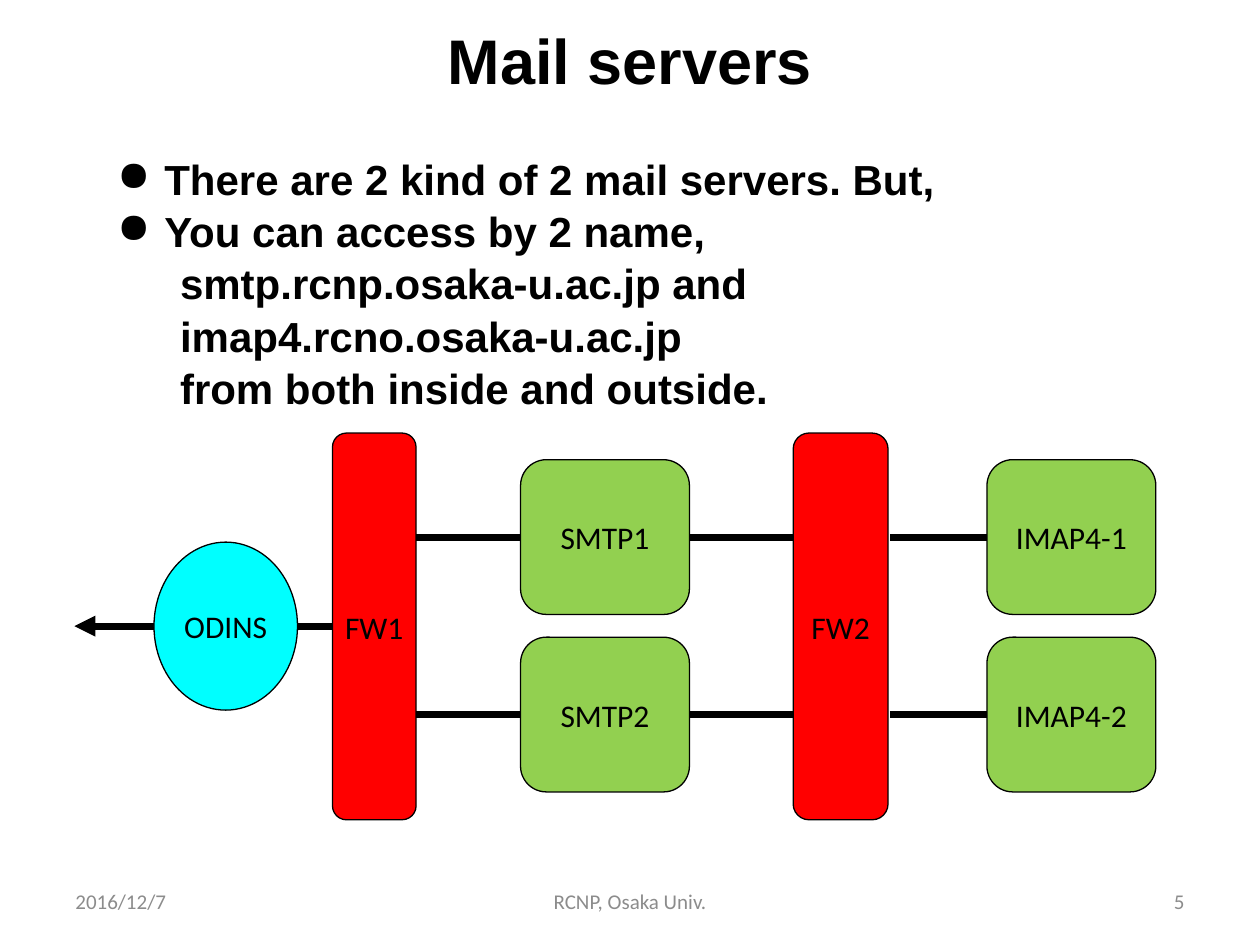
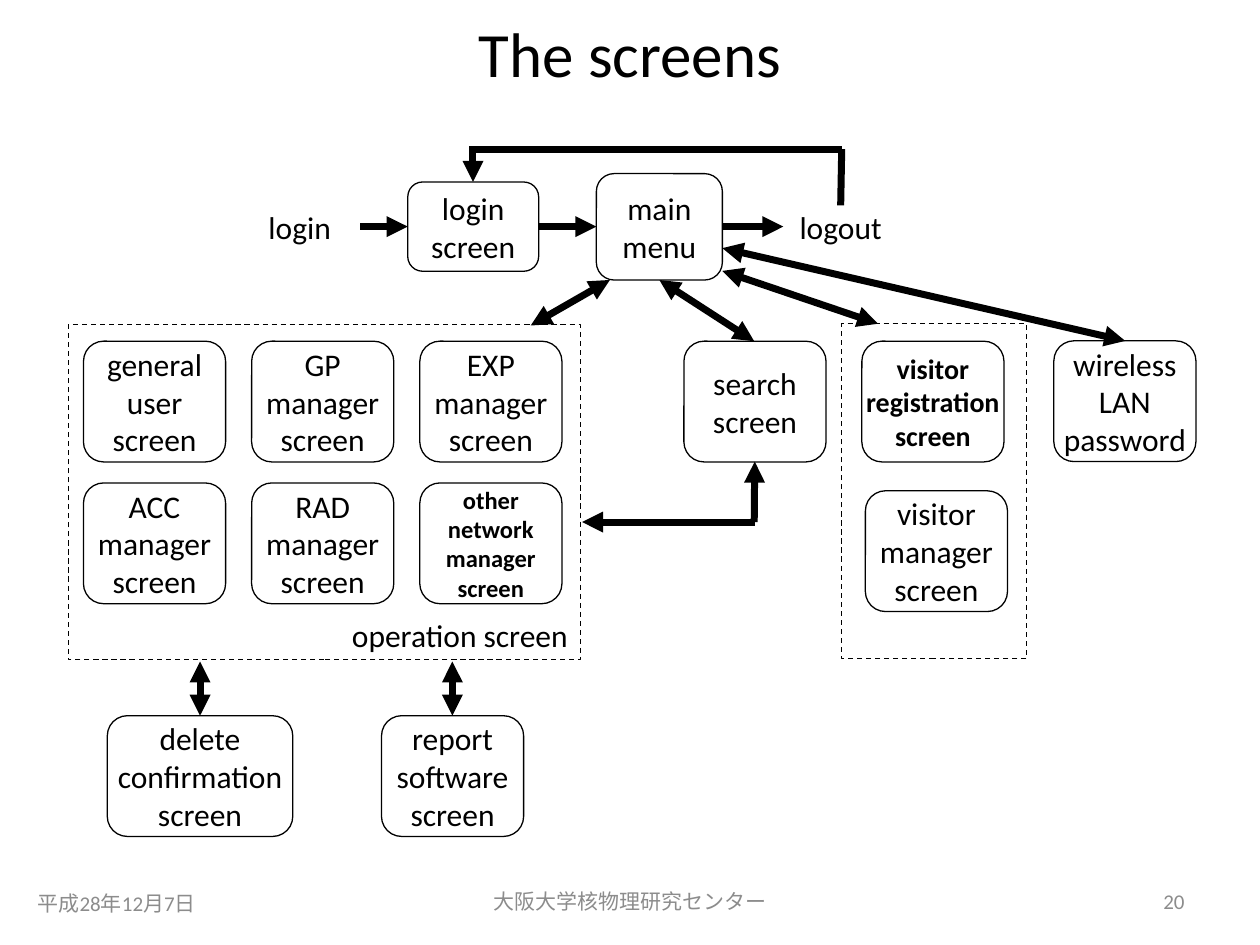
from lxml import etree
from pptx import Presentation
from pptx.dml.color import RGBColor
from pptx.enum.dml import MSO_LINE
from pptx.enum.shapes import MSO_CONNECTOR, MSO_SHAPE
from pptx.enum.text import MSO_ANCHOR, MSO_AUTO_SIZE, PP_ALIGN
from pptx.oxml.ns import qn
from pptx.util import Pt

ROUNDED = MSO_SHAPE.ROUNDED_RECTANGLE
RECTANGLE = MSO_SHAPE.RECTANGLE
OVAL = MSO_SHAPE.OVAL
STRAIGHT = MSO_CONNECTOR.STRAIGHT
DASH = MSO_LINE.DASH
MIDDLE = MSO_ANCHOR.MIDDLE
BOTTOM = MSO_ANCHOR.BOTTOM
LEFT, CENTER, RIGHT = PP_ALIGN.LEFT, PP_ALIGN.CENTER, PP_ALIGN.RIGHT

BLACK = RGBColor(0x00, 0x00, 0x00)
WHITE = RGBColor(0xFF, 0xFF, 0xFF)
GRAY = RGBColor(0x8C, 0x8C, 0x8C)
RED = RGBColor(0xFF, 0x00, 0x00)
GREEN = RGBColor(0x92, 0xD0, 0x50)
CYAN = RGBColor(0x00, 0xFF, 0xFF)


def add_box(slide, kind, left, top, width, height, text="", fill=None, size=18, bold=False):
    shape = slide.shapes.add_shape(kind, Pt(left), Pt(top), Pt(width), Pt(height))
    shape.shadow.inherit = False
    if fill is None:
        shape.fill.background()
    else:
        shape.fill.solid()
        shape.fill.fore_color.rgb = fill
    shape.line.color.rgb = BLACK
    shape.line.width = Pt(0.75)
    frame = shape.text_frame
    frame.word_wrap = False
    frame.vertical_anchor = MIDDLE
    frame.text = text
    for paragraph in frame.paragraphs:
        paragraph.alignment = CENTER
        paragraph.font.name = "Calibri"
        paragraph.font.size = Pt(size)
        paragraph.font.bold = bold
        paragraph.font.color.rgb = BLACK
    return shape


def add_line(slide, x1, y1, x2, y2, *arrow_ends):
    connector = slide.shapes.add_connector(STRAIGHT, Pt(x1), Pt(y1), Pt(x2), Pt(y2))
    connector.line.color.rgb = BLACK
    connector.line.width = Pt(4)
    line = connector.line._get_or_add_ln()
    for end in arrow_ends:
        etree.SubElement(line, qn("a:" + end), type="triangle")
    etree.SubElement(connector._element.spPr, qn("a:effectLst"))


presentation = Presentation()
presentation.slide_width = Pt(720)
presentation.slide_height = Pt(540)

slides = []
for title, title_font, title_bold, title_top, date, date_left, date_top, footer, number in [
    ("Mail servers", "Arial", True, 8.6, "2016/12/7", 36, 500.4, "RCNP, Osaka Univ.", "5"),
    ("The screens", "Calibri", False, 4.3, "平成28年12月7日", 14.4, 501.8, "大阪大学核物理研究センター", "20"),
]:
    slide = presentation.slides.add_slide(presentation.slide_layouts[5])
    slides.append(slide)
    heading = slide.shapes.title
    heading.left, heading.top, heading.width, heading.height = Pt(54), Pt(title_top), Pt(612), Pt(51)
    heading.text_frame.text = title
    heading.text_frame.auto_size = MSO_AUTO_SIZE.NONE
    heading.text_frame.vertical_anchor = MIDDLE
    paragraph = heading.text_frame.paragraphs[0]
    paragraph.alignment = CENTER
    paragraph.font.name = title_font
    paragraph.font.size = Pt(36)
    paragraph.font.bold = title_bold
    paragraph.font.color.rgb = BLACK
    for text, left, top, width, alignment in [
        (date, date_left, date_top, 168, LEFT),
        (footer, 246, 500.4, 228, CENTER),
        (number, 516, 500.4, 168, RIGHT),
    ]:
        text_box = slide.shapes.add_textbox(Pt(left), Pt(top), Pt(width), Pt(28.8))
        text_box.text_frame.word_wrap = True
        text_box.text_frame.vertical_anchor = MIDDLE
        text_box.text_frame.text = text
        paragraph = text_box.text_frame.paragraphs[0]
        paragraph.alignment = alignment
        paragraph.font.name = "Calibri"
        paragraph.font.size = Pt(12)
        paragraph.font.color.rgb = GRAY

mail_slide, screens_slide = slides

body = mail_slide.shapes.add_textbox(Pt(59.8), Pt(82.8), Pt(586.8), Pt(145.4))
body.text_frame.word_wrap = True
body.text_frame.text = "\n".join([
    "There are 2 kind of 2 mail servers. But,",
    "You can access by 2 name,",
    "smtp.rcnp.osaka-u.ac.jp and imap4.rcno.osaka-u.ac.jp",
    "from both inside and outside.",
])
for index, paragraph in enumerate(body.text_frame.paragraphs):
    paragraph.line_spacing = 1.04
    paragraph.font.name = "Arial"
    paragraph.font.size = Pt(24)
    paragraph.font.bold = True
    paragraph.font.color.rgb = BLACK
    properties = paragraph._p.get_or_add_pPr()
    if index < 2:
        properties.set("marL", str(Pt(27)))
        properties.set("indent", str(Pt(-27)))
        bullet = etree.Element(qn("a:buChar"), char="●")
        properties.find(qn("a:lnSpc")).addnext(bullet)
    else:
        paragraph.level = 1
        properties.set("marL", str(Pt(36)))
        properties.set("indent", "0")

add_line(mail_slide, 88, 357.8, 42.5, 357.8, "tailEnd")
add_line(mail_slide, 170, 357.8, 190, 357.8)
add_box(mail_slide, OVAL, 88, 309.8, 82, 96, "ODINS", CYAN)
add_box(mail_slide, ROUNDED, 190, 247.5, 47.8, 221, "FW1", RED)
add_box(mail_slide, ROUNDED, 453.3, 247.5, 54.2, 221, "FW2", RED)
for row in range(2):
    server_top = 262.7 + 101.4 * row
    wire_y = server_top + 44.2
    for name, left in [("SMTP", 297.5), ("IMAP4-", 564)]:
        add_box(mail_slide, ROUNDED, left, server_top, 96.5, 88.4, f"{name}{row + 1}", GREEN)
    for start, end in [(237.8, 297.5), (394, 453.3), (508.5, 564)]:
        add_line(mail_slide, start, wire_y, end, wire_y)

for x1, y1, x2, y2 in [
    (206, 129.5, 233, 129.5),
    (307.7, 129.5, 340.8, 129.5),
    (412.8, 129.5, 447.6, 129.5),
    (270.3, 83.5, 270.3, 104),
    (431.3, 298.3, 332.6, 298.3),
    (431, 298.3, 431.3, 263.8),
]:
    add_line(screens_slide, x1, y1, x2, y2, "tailEnd")
for x1, y1, x2, y2 in [
    (348.5, 160, 303.3, 186),
    (376.8, 160, 431, 195),
    (412.8, 154.8, 501.8, 185),
    (412.8, 141.8, 643, 194.8),
    (114.3, 378, 114.3, 409),
    (258.5, 378, 258.5, 409),
]:
    add_line(screens_slide, x1, y1, x2, y2, "headEnd", "tailEnd")
add_line(screens_slide, 481, 85.2, 480.4, 117.4)
add_line(screens_slide, 481, 85.2, 269.3, 85.2)

for text, left, width in [("login", 136.8, 69), ("logout", 447.6, 65.5)]:
    label = add_box(screens_slide, ROUNDED, left, 117.4, width, 24.5, text)
    label.line.fill.background()
add_box(screens_slide, ROUNDED, 233, 104, 74.8, 51, "login\nscreen", WHITE)
add_box(screens_slide, ROUNDED, 340.8, 99.2, 72, 60.8, "main\nmenu", WHITE)

operation_frame = add_box(screens_slide, RECTANGLE, 39, 185.5, 292.6, 191.5, "operation screen")
operation_frame.text_frame.word_wrap = True
operation_frame.text_frame.vertical_anchor = BOTTOM
operation_frame.text_frame.paragraphs[0].alignment = RIGHT
visitor_frame = add_box(screens_slide, RECTANGLE, 481, 185, 105.7, 191.5)
for frame in (operation_frame, visitor_frame):
    frame.line.dash_style = DASH

operation_screens = [
    ("general\nuser\nscreen", "GP\nmanager\nscreen", "EXP\nmanager\nscreen"),
    ("ACC\nmanager\nscreen", "RAD\nmanager\nscreen", "other\nnetwork\nmanager\nscreen"),
]
for row, names in enumerate(operation_screens):
    for column, name in enumerate(names):
        small = name.startswith("other")
        add_box(screens_slide, ROUNDED, 47.7 + 96.1 * column, 195 + 81 * row, 81.2, 69, name,
                size=14 if small else 18, bold=small)

for name, left, top, width in [
    ("search\nscreen", 390.8, 195, 81.2),
    ("visitor\nmanager\nscreen", 494.5, 280.5, 81.2),
    ("wireless\nLAN\npassword", 602.2, 194.8, 81.2),
    ("delete\nconfirmation\nscreen", 61.3, 409, 106),
    ("report\nsoftware\nscreen", 218, 409, 81.2),
]:
    add_box(screens_slide, ROUNDED, left, top, width, 69, name)
add_box(screens_slide, ROUNDED, 492.5, 195, 81.2, 69, "visitor\nregistration\nscreen", size=16, bold=True)

presentation.save("out.pptx")
